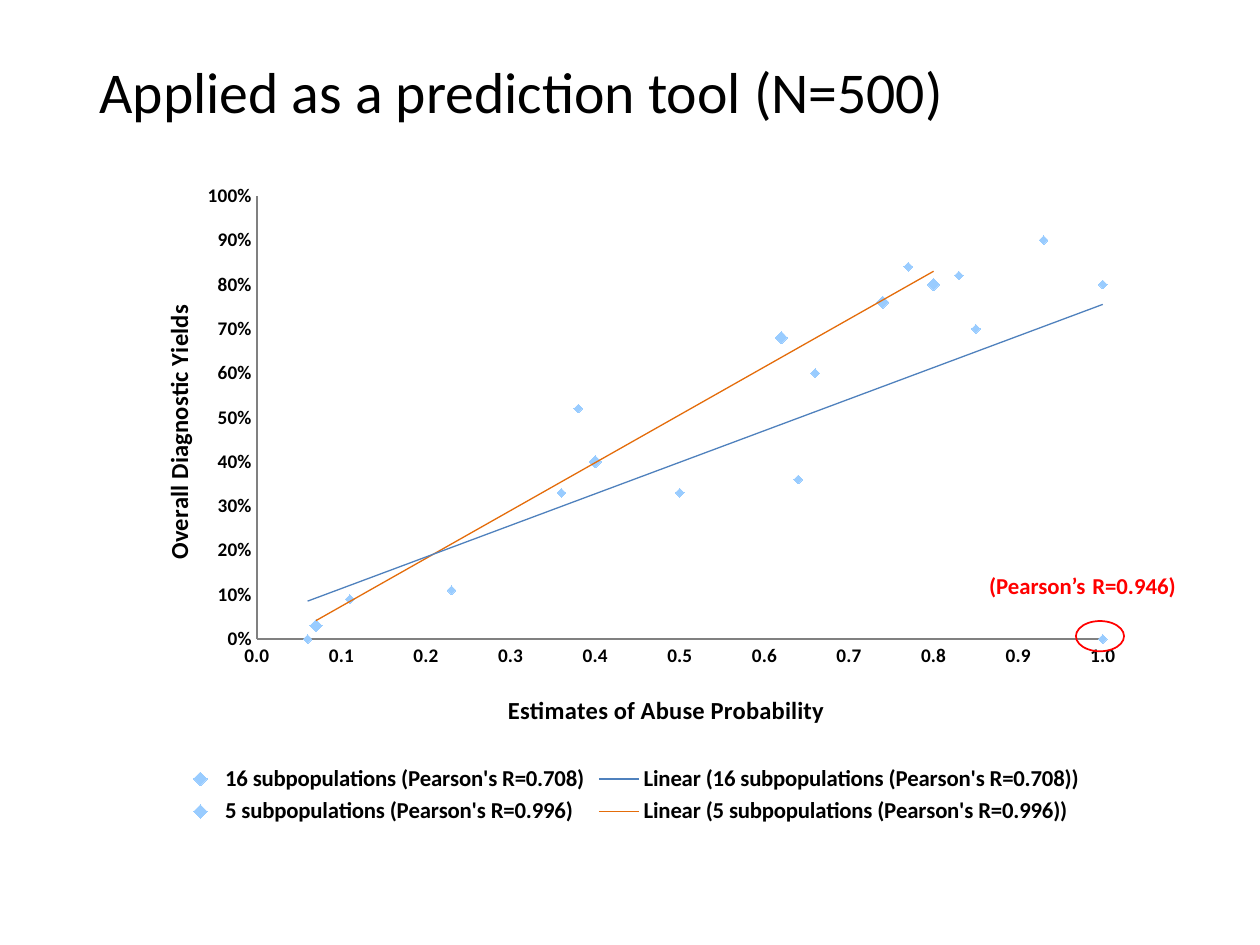
from lxml.etree import SubElement
from pptx import Presentation
from pptx.chart.data import XyChartData
from pptx.dml.color import RGBColor
from pptx.enum.chart import XL_CHART_TYPE, XL_LEGEND_POSITION, XL_MARKER_STYLE, XL_TICK_MARK
from pptx.enum.shapes import MSO_SHAPE
from pptx.enum.text import MSO_ANCHOR, PP_ALIGN
from pptx.oxml import parse_xml
from pptx.oxml.ns import nsdecls, qn
from pptx.util import Cm, Pt

BLACK = RGBColor(0x00, 0x00, 0x00)
RED = RGBColor(0xFF, 0x00, 0x00)
GREY = RGBColor(0x80, 0x80, 0x80)
LIGHT_BLUE = RGBColor(0x99, 0xCC, 0xFF)
BLUE = RGBColor(0x4F, 0x81, 0xBD)
ORANGE = RGBColor(0xE4, 0x6C, 0x0A)
FONT = "Calibri"

# Series name, marker size, trend line colour, (probability, yield) points
SUBPOPULATIONS = [
    ("16 subpopulations (Pearson's R=0.708)", 5, BLUE,
     [(0.8, 0.8), (0.93, 0.9), (1, 0), (0.83, 0.82), (0.38, 0.52), (0.77, 0.84),
      (0.06, 0), (0.36, 0.33), (1, 0.8), (0.85, 0.7), (0.5, 0.33), (0.64, 0.36),
      (0.23, 0.11), (0.66, 0.6), (0.11, 0.09), (0.07, 0.03)]),
    ("5 subpopulations (Pearson's R=0.996)", 7, ORANGE,
     [(0.8, 0.8), (0.74, 0.76), (0.62, 0.68), (0.4, 0.4), (0.07, 0.03)]),
]


def set_font(font, size, color=BLACK, bold=False):
    font.name = FONT
    font.size = Pt(size)
    font.bold = bold
    font.color.rgb = color


def add_span(para, text, size, color=BLACK, bold=False):
    span = para.add_run()
    span.text = text
    set_font(span.font, size, color, bold)


def set_layout(layout, **values):
    """Place a chart part by fractions of the chart's size."""
    manual = SubElement(layout, qn("c:manualLayout"))
    for name, value in values.items():
        SubElement(manual, qn(f"c:{name}")).set("val", str(value))


def format_title(page):
    title = page.shapes.title
    title.left, title.top, title.width, title.height = Cm(1.75), Cm(0.05), Cm(21.9), Cm(3.73)
    title.text_frame.vertical_anchor = MSO_ANCHOR.MIDDLE
    para = title.text_frame.paragraphs[0]
    para.alignment = PP_ALIGN.LEFT
    para.line_spacing = 0.9
    add_span(para, "Applied as a prediction tool (N=500)", 33)


def format_axis(axis, title, number_format, left, top, rotation=0):
    axis.minimum_scale, axis.maximum_scale, axis.major_unit = 0, 1, 0.1
    axis.has_major_gridlines = False
    axis.major_tick_mark = axis.minor_tick_mark = XL_TICK_MARK.NONE
    axis.format.line.color.rgb = GREY
    axis.format.line.width = Pt(0.75)
    labels = axis.tick_labels
    labels.number_format = number_format
    labels.number_format_is_linked = False
    set_font(labels.font, 11, bold=True)
    axis_title = axis.axis_title
    add_span(axis_title.text_frame.paragraphs[0], title, 14, bold=True)
    element = axis_title._element
    element.find(".//" + qn("a:bodyPr")).set("rot", str(rotation * 60000))
    set_layout(element.find(qn("c:layout")), xMode="edge", yMode="edge", x=left, y=top)


def add_trend_line(series, color):
    trend = parse_xml(
        f'<c:trendline {nsdecls("c", "a")}><c:spPr><a:ln w="{Pt(0.75)}"><a:solidFill>'
        f'<a:srgbClr val="{color}"/></a:solidFill></a:ln></c:spPr>'
        '<c:trendlineType val="linear"/><c:dispRSqr val="0"/><c:dispEq val="0"/></c:trendline>')
    series._element.find(qn("c:xVal")).addprevious(trend)


def format_series(series, marker_size, trend_color):
    series.format.line.fill.background()
    marker = series.marker
    marker.style = XL_MARKER_STYLE.DIAMOND
    marker.size = marker_size
    marker.format.fill.solid()
    marker.format.fill.fore_color.rgb = LIGHT_BLUE
    marker.format.line.fill.background()
    add_trend_line(series, trend_color)


def add_yield_chart(page):
    data = XyChartData()
    for name, _, _, points in SUBPOPULATIONS:
        group = data.add_series(name)
        for probability, diagnostic_yield in points:
            group.add_data_point(probability, diagnostic_yield)
    chart = page.shapes.add_chart(XL_CHART_TYPE.XY_SCATTER, Cm(2.11), Cm(3.71),
                                  Cm(21.16), Cm(13.03), data).chart
    set_font(chart.font, 10)
    chart.has_title = False
    chart.plots[0].vary_by_categories = False
    for series, (_, size, color, _) in zip(chart.plots[0].series, SUBPOPULATIONS):
        series.smooth = False
        format_series(series, size, color)
    format_axis(chart.category_axis, "Estimates of Abuse Probability", "0.0", 0.38, 0.78)
    format_axis(chart.value_axis, "Overall Diagnostic Yields", "0%", 0.05, 0.18, -90)
    chart.has_legend = True
    chart.legend.position = XL_LEGEND_POSITION.BOTTOM
    chart.legend.include_in_layout = False
    set_font(chart.legend.font, 13, bold=True)

    plot_area = chart._chartSpace.chart.plotArea
    layout = plot_area.find(qn("c:layout"))
    if layout is None:
        layout = parse_xml(f'<c:layout {nsdecls("c")}/>')
        plot_area.insert(0, layout)
    set_layout(layout, layoutTarget="inner", xMode="edge", yMode="edge",
               x=0.145, y=0.018, w=0.806, h=0.686)


def add_outlier_ring(page):
    ring = page.shapes.add_shape(MSO_SHAPE.OVAL, Cm(21.69), Cm(12.52), Cm(0.97), Cm(0.61))
    ring.shadow.inherit = False
    ring.fill.background()
    ring.line.color.rgb = RED
    ring.line.width = Pt(1)


def add_correlation_note(page):
    box = page.shapes.add_textbox(Cm(19.69), Cm(11.23), Cm(4.88), Cm(1.27))
    box.text_frame.word_wrap = True
    para = box.text_frame.paragraphs[0]
    for text, size in [("(Pearson’s", 13), (" ", 18), ("R=0.946)", 13)]:
        add_span(para, text, size, RED, True)


def main():
    deck = Presentation()
    deck.slide_width, deck.slide_height = Cm(25.4), Cm(19.05)
    page = deck.slides.add_slide(deck.slide_layouts[5])
    format_title(page)
    add_yield_chart(page)
    add_outlier_ring(page)
    add_correlation_note(page)
    deck.save("out.pptx")


if __name__ == "__main__":
    main()
